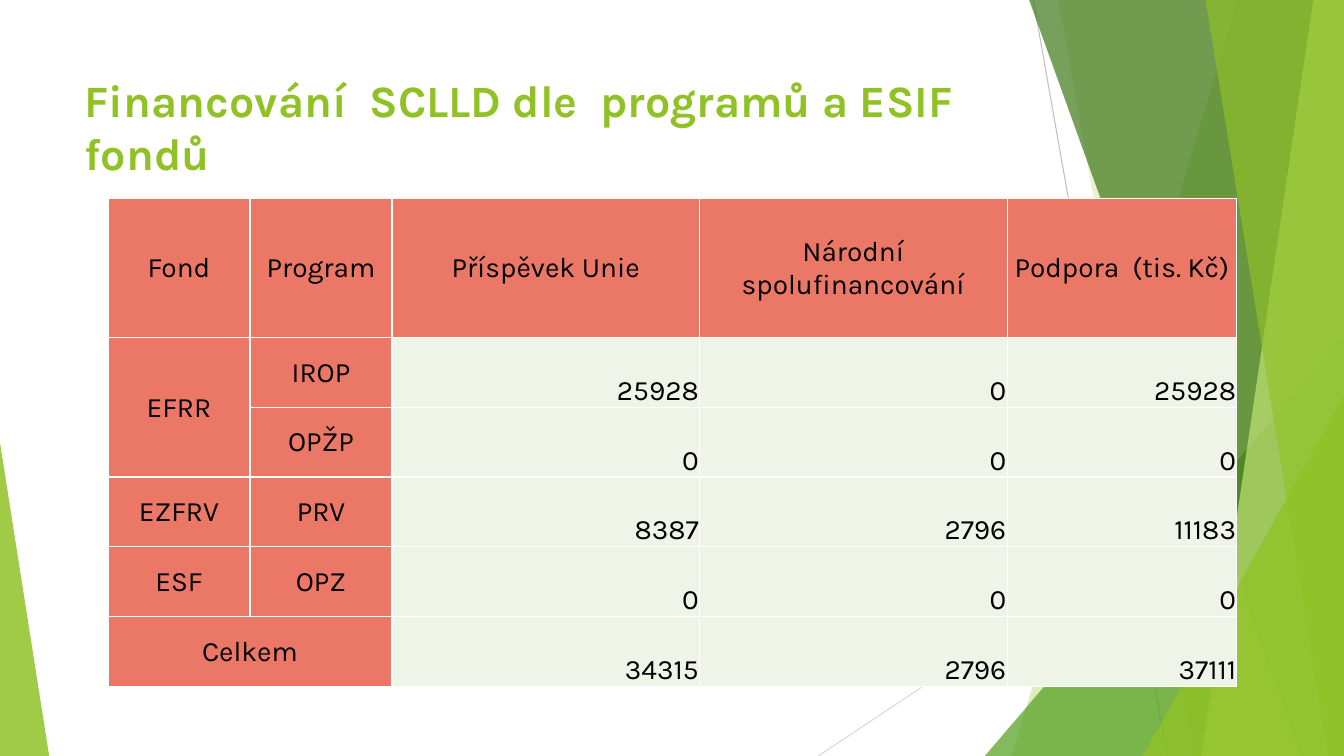
import dataclasses
import typing

import pptx
import pptx.dml.color
import pptx.enum.shapes
import pptx.enum.text
import pptx.oxml
import pptx.oxml.ns
import pptx.util

Cm = pptx.util.Cm
Pt = pptx.util.Pt
ALIGN = pptx.enum.text.PP_ALIGN
ANCHOR = pptx.enum.text.MSO_ANCHOR
NAMESPACE = pptx.oxml.ns.nsdecls("a")

WIDTH, HEIGHT, BAND_TOP = 33.87, 19.05, -0.02
FONT = "Karla"
COLOURS = {
    "lime": "90C226",
    "green": "54A021",
    "forest": "3F7819",
    "pale lime": "C0E474",
    "grey": "BFBFBF",
    "light grey": "D9D9D9",
    "coral": "EB7766",
    "mint": "EEF4E8",
    "white": "FFFFFF",
    "black": "000000",
}


@dataclasses.dataclass
class Ray:
    start: tuple[float, float]
    end: tuple[float, float]
    colour: str


@dataclasses.dataclass
class Band:
    top_x: float
    bottom_x: float
    colour: str
    opacity: int


@dataclasses.dataclass
class Wedge:
    left: float
    top: float
    width: float
    apex: float
    colour: str
    opacity: int


RAYS = [
    Ray((26.04, 0), (29.41, HEIGHT), "grey"),
    Ray((WIDTH, 10.24), (20.62, HEIGHT), "light grey"),
]
FACETS = [
    Band(31.19, 25.5, "lime", 30),
    Band(26.67, 30.05, "lime", 20),
    Wedge(24.82, 8.46, 9.05, 1, "green", 72),
    Band(25.93, 32.79, "forest", 70),
    Band(33.1, 30.28, "pale lime", 70),
    Band(30.38, 33.48, "lime", 65),
    Wedge(28.8, 9.98, 5.07, 1, "lime", 80),
    Wedge(0, 11.15, 1.24, 0, "lime", 85),
]

TITLE = "Financování  SCLLD dle  programů a ESIF fondů"
COLUMN_WIDTHS = [3.58, 3.58, 7.75, 7.75, 5.79]
ROW_HEIGHTS = [3.51] + [1.756] * 5
FUNDING = [
    ["Fond", "Program", "Příspěvek Unie", "Národní spolufinancování", "Podpora  (tis. Kč)"],
    ["EFRR", "IROP", "25928", "0", "25928"],
    ["", "OPŽP", "0", "0", "0"],
    ["EZFRV", "PRV", "8387", "2796", "11183"],
    ["ESF", "OPZ", "0", "0", "0"],
    ["Celkem", "", "34315", "2796", "37111"],
]
MERGES = [((1, 0), (2, 0)), ((5, 0), (5, 1))]


def colour_of(name: str) -> pptx.dml.color.RGBColor:
    return pptx.dml.color.RGBColor.from_string(COLOURS[name])


def apply(target: typing.Any, values: dict[str, typing.Any]) -> None:
    for name, value in values.items():
        setattr(target, name, value)


def write(para: typing.Any, text: str, size: int, colour: str, bold: bool) -> None:
    span = para.add_run()
    span.text = text
    apply(span.font, {"name": FONT, "size": Pt(size), "bold": bold})
    span.font.color.rgb = colour_of(colour)


def draw_ray(page: typing.Any, ray: Ray) -> None:
    line = page.shapes.add_connector(
        pptx.enum.shapes.MSO_CONNECTOR.STRAIGHT,
        *(Cm(value) for value in ray.start + ray.end),
    )
    line.line.color.rgb = colour_of(ray.colour)
    line.line.width = Pt(0.75)
    line._element.spPr.append(pptx.oxml.parse_xml(f"<a:effectLst {NAMESPACE}/>"))


def draw_facet(page: typing.Any, facet: Band | Wedge) -> None:
    if isinstance(facet, Band):
        outline = page.shapes.build_freeform(Cm(facet.top_x), Cm(BAND_TOP))
        corners = [(WIDTH, BAND_TOP), (WIDTH, HEIGHT), (facet.bottom_x, HEIGHT)]
        outline.add_line_segments([(Cm(x), Cm(y)) for x, y in corners], close=True)
        shape = outline.convert_to_shape()
    else:
        shape = page.shapes.add_shape(
            pptx.enum.shapes.MSO_SHAPE.ISOSCELES_TRIANGLE,
            Cm(facet.left), Cm(facet.top), Cm(facet.width), Cm(HEIGHT - facet.top),
        )
        shape.adjustments[0] = facet.apex
    shape.shadow.inherit = False
    shape.line.fill.background()
    shape.fill.solid()
    shape.fill.fore_color.rgb = colour_of(facet.colour)
    tint = shape._element.spPr.find(".//" + pptx.oxml.ns.qn("a:srgbClr"))
    tint.append(pptx.oxml.parse_xml(f'<a:alpha {NAMESPACE} val="{facet.opacity * 1000}"/>'))


def draw_title(page: typing.Any) -> None:
    box = page.shapes.add_textbox(Cm(1.88), Cm(1.7), Cm(23.88), Cm(3.66))
    apply(box.text_frame, {"word_wrap": True, "vertical_anchor": ANCHOR.TOP})
    write(box.text_frame.paragraphs[0], TITLE, 32, "lime", True)


def add_borders(cell: typing.Any) -> None:
    properties = cell._tc.get_or_add_tcPr()
    for index, side in enumerate(["lnL", "lnR", "lnT", "lnB"]):
        border = pptx.oxml.parse_xml(
            f'<a:{side} {NAMESPACE} w="{Pt(1)}"><a:solidFill>'
            f'<a:srgbClr val="{COLOURS["white"]}"/></a:solidFill></a:{side}>'
        )
        properties.insert(index, border)


def draw_cell(cell: typing.Any, text: str, is_label: bool) -> None:
    margins = dict.fromkeys(["margin_left", "margin_right", "margin_top"], Cm(0.02))
    anchor = ANCHOR.MIDDLE if is_label else ANCHOR.BOTTOM
    apply(cell, margins | {"margin_bottom": 0, "vertical_anchor": anchor})
    cell.fill.solid()
    cell.fill.fore_color.rgb = colour_of("coral" if is_label else "mint")
    add_borders(cell)
    para = cell.text_frame.paragraphs[0]
    para.alignment = ALIGN.CENTER if is_label else ALIGN.RIGHT
    if text:
        write(para, text, 20, "black", False)


def draw_table(page: typing.Any) -> None:
    table = page.shapes.add_table(
        len(ROW_HEIGHTS), len(COLUMN_WIDTHS),
        Cm(2.72), Cm(5), Cm(sum(COLUMN_WIDTHS)), Cm(sum(ROW_HEIGHTS)),
    ).table
    apply(table, {"first_row": False, "horz_banding": False})
    for column, width in zip(table.columns, COLUMN_WIDTHS):
        column.width = Cm(width)
    for row, height in zip(table.rows, ROW_HEIGHTS):
        row.height = Cm(height)
    for first, last in MERGES:
        table.cell(*first).merge(table.cell(*last))
    for row_index, texts in enumerate(FUNDING):
        for column_index, text in enumerate(texts):
            is_label = row_index == 0 or column_index < 2
            draw_cell(table.cell(row_index, column_index), text, is_label)


def main() -> None:
    deck = pptx.Presentation()
    apply(deck, {"slide_width": Cm(WIDTH), "slide_height": Cm(HEIGHT)})
    page = deck.slides.add_slide(deck.slide_layouts[6])
    for ray in RAYS:
        draw_ray(page, ray)
    for facet in FACETS:
        draw_facet(page, facet)
    draw_title(page)
    draw_table(page)
    deck.save("out.pptx")


if __name__ == "__main__":
    main()
